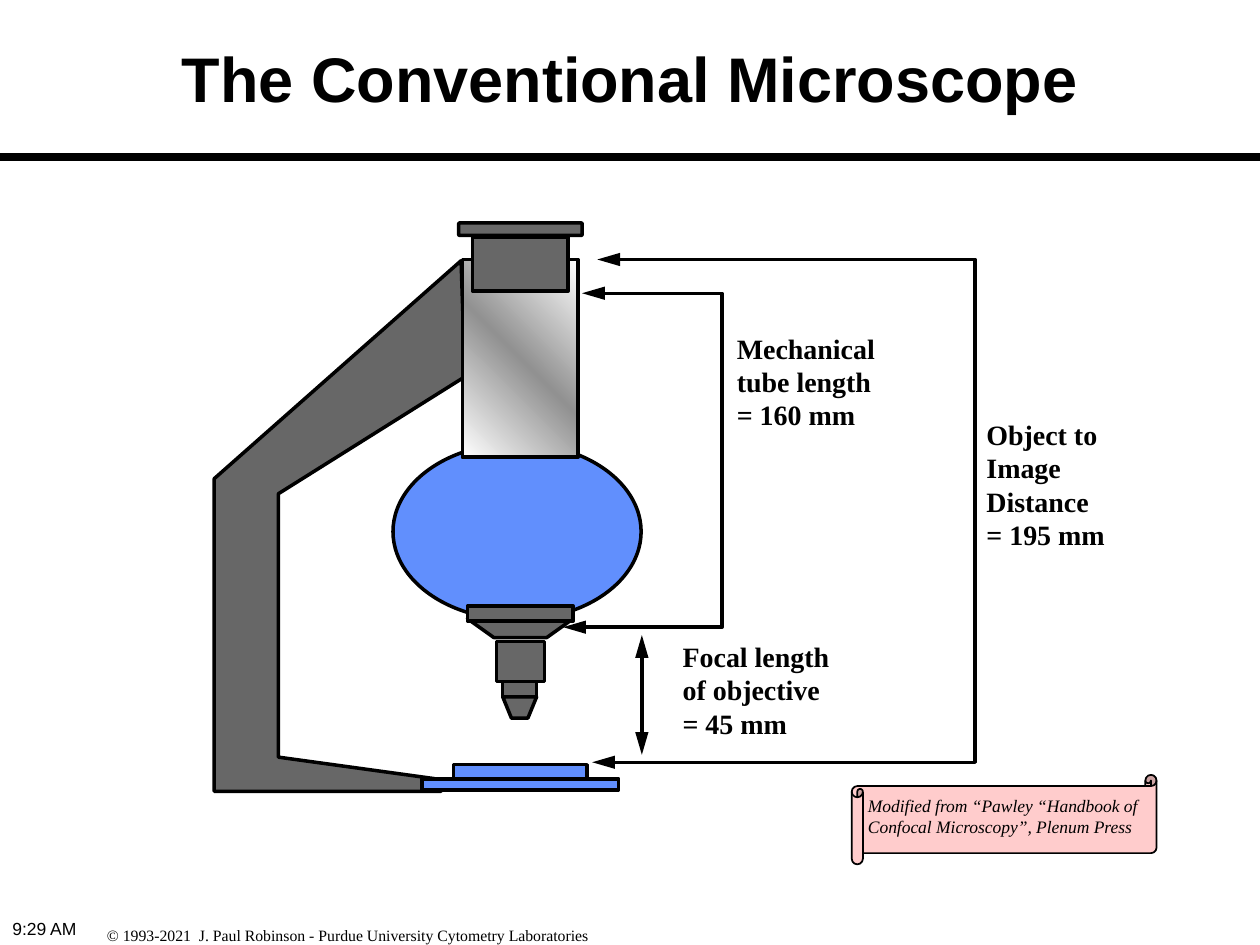
from copy import deepcopy
from dataclasses import dataclass

from pptx import Presentation
from pptx.dml.color import RGBColor
from pptx.enum.shapes import MSO_CONNECTOR, MSO_SHAPE
from pptx.enum.text import MSO_ANCHOR, PP_ALIGN
from pptx.oxml.ns import qn
from pptx.oxml.xmlchemy import OxmlElement
from pptx.util import Pt

BLACK, GREY, BLUE, PINK = "000000", "676767", "618FFD", "FFCCCC"
SANS, SERIF = "Arial", "Times New Roman"
HEAD_LENGTH, HEAD_HALF = 13, 3.8
LINE_PITCH = 19

Point = tuple[float, float]


@dataclass
class Part:
    """A preset shape of the microscope."""
    left: float
    top: float
    width: float
    height: float
    fill: str = GREY
    kind: MSO_SHAPE = MSO_SHAPE.RECTANGLE
    line_width: float = 2


@dataclass
class Bracket:
    """A dimension line with left-pointing heads at its two ends."""
    top_tip: float
    bottom_tip: float
    top: float
    bottom: float
    right: float


@dataclass
class Label:
    left: float
    top: float
    width: float
    lines: list[str]


ARM = [(263.5, 149), (122.4, 273.6), (122.4, 452.2), (252, 452.2),
       (248.4, 445), (159.1, 432.7), (159.1, 282.2), (265.7, 215.3)]
LENS_TIP = [(301.7, 410.4), (306.7, 398.2), (287.3, 398.2), (292.3, 410.4)]
CONE = [(312.5, 364.3), (327.6, 353.5), (267.1, 353.5), (282.2, 364.3)]

OBJECTIVE = [Part(287.3, 389.5, 19.4, 8.6), Part(283.7, 366.5, 27.4, 23)]
BODY = Part(224.6, 253.4, 141.8, 100.8, BLUE, MSO_SHAPE.OVAL)
TUBE = Part(264.2, 148.3, 66.2, 113)
EYEPIECE = Part(270, 135.4, 54.7, 31)
CAP = Part(262.1, 127.4, 70.6, 7.2, kind=MSO_SHAPE.ROUNDED_RECTANGLE)
COLLAR = Part(267.1, 346.3, 60.5, 8.6)
STAGE = [Part(241.2, 445, 112.3, 6.5, BLUE), Part(259.2, 437, 76.3, 7.9, BLUE)]
SCROLL = Part(486.7, 442.8, 174.2, 51.1, PINK, MSO_SHAPE.HORIZONTAL_SCROLL, 1)
TITLE_RULE = Part(0, 87.8, 720, 3.6, BLACK, line_width=1)

BRACKETS = [Bracket(332.6, 321.8, 167.6, 358.4, 412.6),
            Bracket(341.3, 338.4, 148.3, 435.6, 557.3)]
LABELS = [
    Label(383, 362.2, 99, ["Focal length", "of objective", "= 45 mm"]),
    Label(556.6, 235.4, 83, ["Object to", "Image", "Distance", "= 195 mm"]),
    Label(414, 185.8, 94, ["Mechanical", "tube length", "= 160 mm"]),
]


def rgb(value: str) -> RGBColor:
    return RGBColor.from_string(value)


def style(s, fill: str | None, line_width: float) -> None:
    s.shadow.inherit = False
    if fill:
        s.fill.solid()
        s.fill.fore_color.rgb = rgb(fill)
    else:
        s.fill.background()
    if line_width:
        s.line.color.rgb = rgb(BLACK)
        s.line.width = Pt(line_width)
    else:
        s.line.fill.background()


def draw_part(shapes, part: Part):
    s = shapes.add_shape(part.kind, Pt(part.left), Pt(part.top),
                         Pt(part.width), Pt(part.height))
    style(s, part.fill, part.line_width)
    return s


def draw_path(shapes, points: list[Point], fill: str | None = GREY,
              line_width: float = 2, close: bool = True) -> None:
    (x, y), *rest = points
    builder = shapes.build_freeform(Pt(x), Pt(y))
    builder.add_line_segments([(Pt(px), Pt(py)) for px, py in rest], close=close)
    style(builder.convert_to_shape(), fill, line_width)


def draw_head(shapes, tip: Point, dx: int, dy: int) -> None:
    """Draw an arrowhead whose base lies from the tip towards (dx, dy)."""
    x, y = tip
    base_x, base_y = x + dx * HEAD_LENGTH, y + dy * HEAD_LENGTH
    side_x, side_y = dy * HEAD_HALF, dx * HEAD_HALF
    draw_path(shapes, [tip, (base_x + side_x, base_y + side_y),
                       (base_x - side_x, base_y - side_y)], BLACK, 0)


def draw_bracket(shapes, b: Bracket) -> None:
    inset = HEAD_LENGTH - 1
    draw_path(shapes, [(b.top_tip + inset, b.top), (b.right, b.top),
                       (b.right, b.bottom), (b.bottom_tip + inset, b.bottom)],
              None, close=False)
    draw_head(shapes, (b.bottom_tip, b.bottom), 1, 0)
    draw_head(shapes, (b.top_tip, b.top), 1, 0)


def draw_focal_arrow(shapes, x: float, top: float, bottom: float) -> None:
    s = shapes.add_connector(MSO_CONNECTOR.STRAIGHT, Pt(x), Pt(top + 8),
                             Pt(x), Pt(bottom - 8))
    s.line.color.rgb = rgb(BLACK)
    s.line.width = Pt(2)
    s._element.spPr.append(OxmlElement("a:effectLst"))
    draw_head(shapes, (x, bottom), 0, -1)
    draw_head(shapes, (x, top), 0, 1)


def draw_tube(shapes) -> None:
    s = draw_part(shapes, TUBE)
    s.fill.gradient()
    s.fill.gradient_angle = 45
    stops = s._element.spPr.find(".//" + qn("a:gsLst"))
    stops.insert(1, deepcopy(stops[0]))
    colors = ("FFFFFF", "919191", "FFFFFF")
    for i, (stop, color) in enumerate(zip(s.fill.gradient_stops, colors)):
        stop.color.rgb = rgb(color)
        stop.position = i / 2


def format_text(tf, size: float, name: str, bold=False, italic=False) -> None:
    for p in tf.paragraphs:
        for r in p.runs:
            r.font.size, r.font.name = Pt(size), name
            r.font.bold, r.font.italic = bold, italic
            r.font.color.rgb = rgb(BLACK)


def add_text(shapes, left: float, top: float, width: float, height: float,
             text: str, size: float, name: str = SERIF, **emphasis):
    tf = shapes.add_textbox(Pt(left), Pt(top), Pt(width), Pt(height)).text_frame
    tf.word_wrap = True
    tf.text = text
    format_text(tf, size, name, **emphasis)
    return tf


def draw_label(shapes, label: Label) -> None:
    tf = add_text(shapes, label.left, label.top, label.width,
                  len(label.lines) * LINE_PITCH + 7.2,
                  "\n".join(label.lines), 16, bold=True)
    tf.word_wrap = False
    for p in tf.paragraphs:
        p.line_spacing = Pt(LINE_PITCH)


def set_title(s) -> None:
    s.left, s.top, s.width, s.height = Pt(63), Pt(13.7), Pt(594), Pt(61.2)
    tf = s.text_frame
    tf.text = "The Conventional Microscope"
    tf.vertical_anchor = MSO_ANCHOR.MIDDLE
    tf.paragraphs[0].alignment = PP_ALIGN.CENTER
    format_text(tf, 36, SANS, bold=True)


def draw_microscope(shapes) -> None:
    draw_path(shapes, ARM)
    draw_path(shapes, LENS_TIP)
    for part in OBJECTIVE:
        draw_part(shapes, part)
    draw_path(shapes, CONE)
    draw_part(shapes, BODY)
    draw_tube(shapes)
    draw_part(shapes, EYEPIECE)
    draw_part(shapes, CAP).adjustments[0] = 0.1
    for part in [COLLAR, *STAGE]:
        draw_part(shapes, part)


def main() -> None:
    prs = Presentation()
    prs.slide_width, prs.slide_height = Pt(720), Pt(540)
    shapes = prs.slides.add_slide(prs.slide_layouts[5]).shapes
    set_title(shapes.title)
    add_text(shapes, 54, 525.6, 399, 18, "© 1993-2021  J. Paul Robinson - "
             "Purdue University Cytometry Laboratories", 9)
    add_text(shapes, 0, 521.3, 168, 18.7, "9:29 AM", 10, SANS)
    draw_microscope(shapes)
    for bracket in BRACKETS:
        draw_bracket(shapes, bracket)
    draw_focal_arrow(shapes, 366.8, 362.9, 431.3)
    for label in LABELS:
        draw_label(shapes, label)
    draw_part(shapes, SCROLL)
    add_text(shapes, 488.9, 450.7, 199.4, 31, "Modified from “Pawley “Handbook "
             "of Confocal Microscopy”, Plenum Press", 10, italic=True)
    draw_part(shapes, TITLE_RULE)
    prs.save("out.pptx")


if __name__ == "__main__":
    main()
